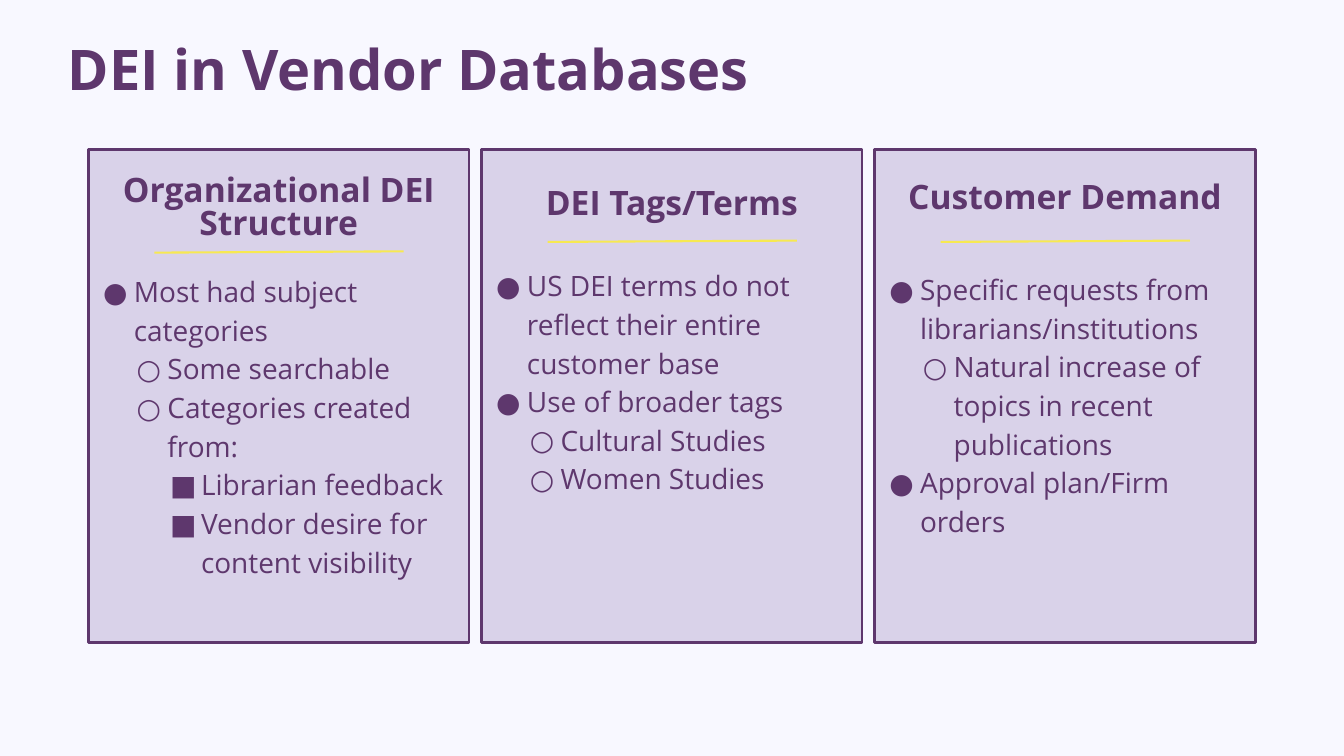
from lxml.etree import SubElement
from pptx import Presentation
from pptx.dml.color import RGBColor
from pptx.enum.shapes import MSO_CONNECTOR, MSO_SHAPE
from pptx.enum.text import MSO_ANCHOR, MSO_AUTO_SIZE, PP_ALIGN
from pptx.oxml.ns import qn
from pptx.util import Pt

FONT = "Open Sans"
PURPLE, LAVENDER, YELLOW, BACKGROUND = "5E376D", "D9D2E9", "F7E951", "F8F8FF"
BULLETS = "●○■"
COLUMNS = [
    {
        "heading": "Organizational DEI Structure",
        "line_spacing": 0.82, "gap": 29.5, "rule_top": 109.5,
        "items": [
            (0, "Most had subject categories"),
            (1, "Some searchable"),
            (1, "Categories created from:"),
            (2, "Librarian feedback"),
            (2, "Vendor desire for content visibility"),
        ],
    },
    {
        "heading": "DEI Tags/Terms",
        "line_spacing": 1.15, "gap": 44.5, "rule_top": 98,
        "items": [
            (0, "US DEI terms do not reflect their entire customer base"),
            (0, "Use of broader tags"),
            (1, "Cultural Studies"),
            (1, "Women Studies"),
        ],
    },
    {
        "heading": "Customer Demand",
        "line_spacing": 1.0, "gap": 55, "rule_top": 98,
        "items": [
            (0, "Specific requests from librarians/institutions"),
            (1, "Natural increase of topics in recent publications"),
            (0, "Approval plan/Firm orders"),
        ],
    },
]


def color(value):
    """Return the colour for a hex string."""
    return RGBColor.from_string(value)


def place(shape, left, top, width, height):
    """Move a placeholder to a box in points and clear its insets and autofit."""
    shape.left, shape.top, shape.width, shape.height = map(Pt, (left, top, width, height))
    frame = shape.text_frame
    frame.margin_left = frame.margin_top = frame.margin_right = frame.margin_bottom = 0
    frame.word_wrap = True
    frame.auto_size = MSO_AUTO_SIZE.NONE
    frame.vertical_anchor = MSO_ANCHOR.TOP
    return frame


def write(paragraph, text, size, bold=False, align=PP_ALIGN.LEFT, line_spacing=1.15,
          space_after=0, level=None):
    """Fill a paragraph with formatted text, bulleted when a level is given."""
    properties = paragraph._p.get_or_add_pPr()
    if level is None:
        properties.set("marL", "0")
        properties.set("indent", "0")
        SubElement(properties, qn("a:buNone"))
    else:
        paragraph.level = level
        properties.set("marL", str(Pt(36 * (level + 1))))
        properties.set("indent", str(-Pt(33)))
        bullet_color = SubElement(properties, qn("a:buClr"))
        SubElement(bullet_color, qn("a:srgbClr"), val=PURPLE)
        SubElement(properties, qn("a:buFont"), typeface=FONT)
        SubElement(properties, qn("a:buChar"), char=BULLETS[level])
    paragraph.alignment = align
    paragraph.line_spacing = line_spacing
    paragraph.space_before = Pt(0)
    paragraph.space_after = Pt(space_after)
    run = paragraph.add_run()
    run.text = text
    run.font.name = FONT
    run.font.size = Pt(size)
    run.font.bold = bold
    run.font.color.rgb = color(PURPLE)


def add_title(slide, text, left, top, width, height):
    """Place the slide title in its box."""
    frame = place(slide.shapes.title, left, top, width, height)
    write(frame.paragraphs[0], text, size=60, bold=True, line_spacing=0.82)


def add_column(slide, body, column, left, top, width, height):
    """Place a panel with its heading, list and yellow rule."""
    panel = slide.shapes.add_shape(
        MSO_SHAPE.RECTANGLE, Pt(left), Pt(top), Pt(width), Pt(height))
    panel.shadow.inherit = False
    panel.fill.solid()
    panel.fill.fore_color.rgb = color(LAVENDER)
    panel.line.color.rgb = color(PURPLE)
    panel.line.width = Pt(3)

    slide.shapes.element.append(body.element)
    frame = place(body, left + 12.4, top + 28, width - 25, height - 62)
    write(frame.paragraphs[0], column["heading"], size=36, bold=True,
          align=PP_ALIGN.CENTER, line_spacing=column["line_spacing"],
          space_after=column["gap"])
    for level, text in column["items"]:
        write(frame.add_paragraph(), text, size=30, level=level)

    rule_left, rule_top = left + 70.5, top + column["rule_top"]
    rule = slide.shapes.add_connector(
        MSO_CONNECTOR.STRAIGHT, Pt(rule_left), Pt(rule_top + 0.7),
        Pt(rule_left + 267), Pt(rule_top - 0.7))
    rule.line.color.rgb = color(YELLOW)
    rule.line.width = Pt(2.25)
    SubElement(rule.element.spPr, qn("a:effectLst"))


def main():
    """Build and save the slide."""
    presentation = Presentation()
    presentation.slide_width, presentation.slide_height = Pt(1440), Pt(810)
    slide = presentation.slides.add_slide(presentation.slide_layouts.get_by_name("Comparison"))
    slide.background.fill.solid()
    slide.background.fill.fore_color.rgb = color(BACKGROUND)

    add_title(slide, "DEI in Vendor Databases", 72.7, 49.7, 1200, 60)
    bodies = list(slide.placeholders)[1:]
    for index, (body, column) in enumerate(zip(bodies, COLUMNS)):
        add_column(slide, body, column, 95 + 421.2 * index, 160.5, 407.5, 527.5)
    for unused in bodies[len(COLUMNS):]:
        slide.shapes.element.remove(unused.element)

    presentation.save("out.pptx")


if __name__ == "__main__":
    main()
